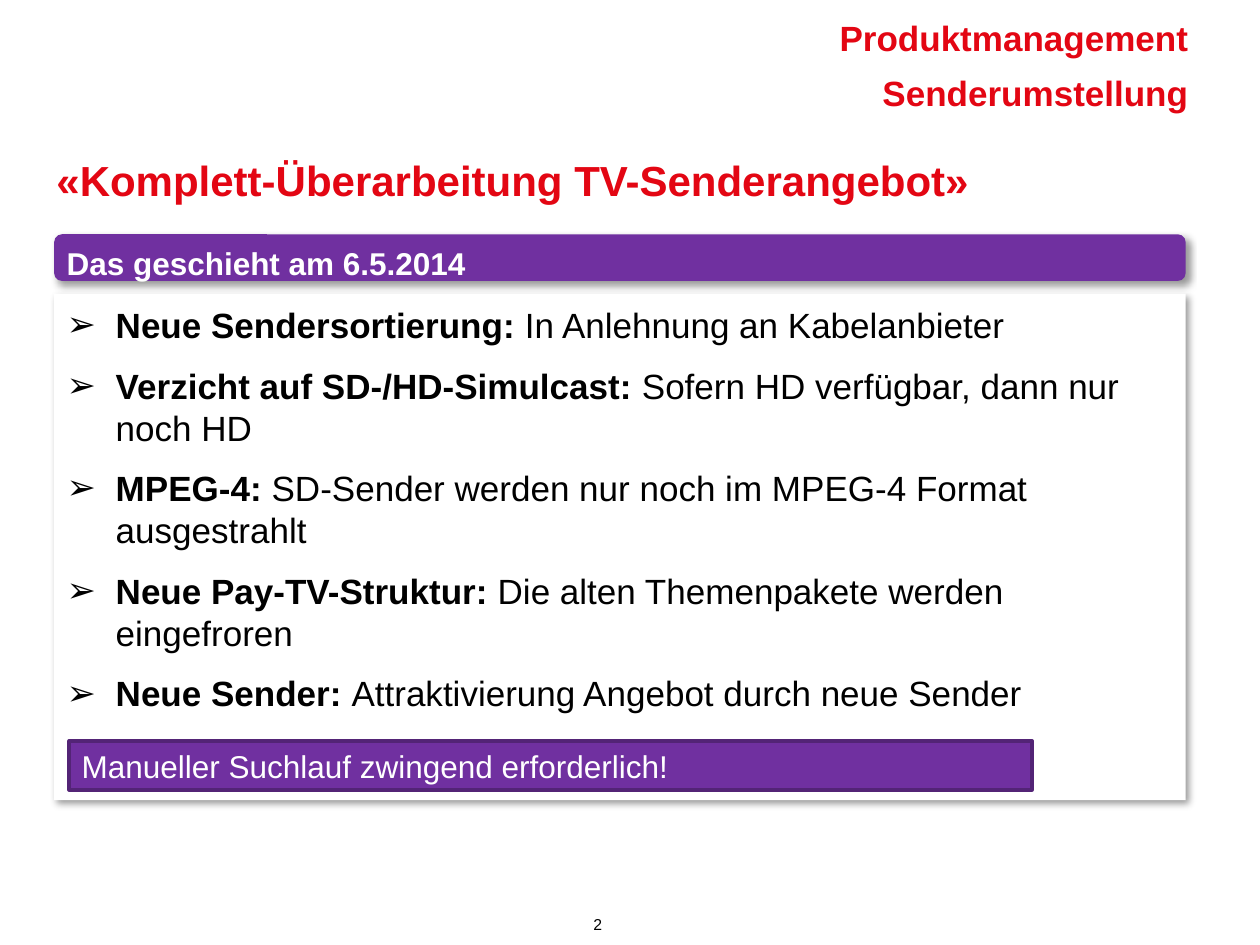
from dataclasses import dataclass
from typing import NamedTuple

from lxml.etree import SubElement
from pptx import Presentation
from pptx.dml.color import RGBColor
from pptx.enum.shapes import MSO_SHAPE as Preset
from pptx.enum.text import MSO_ANCHOR as Anchor, PP_ALIGN as Align
from pptx.oxml.ns import qn
from pptx.util import Inches, Pt


@dataclass(frozen=True)
class Theme:
    font: str = "Arial"
    red: str = "E30613"
    purple: str = "7030A0"
    purple_dark: str = "532476"
    white: str = "FFFFFF"
    black: str = "000000"
    title_size: float = 24
    body_size: float = 20
    bar_size: float = 18
    number_size: float = 9


class Box(NamedTuple):
    left: float
    top: float
    width: float
    height: float

    def lengths(self):
        return [Inches(value) for value in self]


class Point(NamedTuple):
    lead: str
    detail: str


THEME = Theme()
HEADINGS = ["Produktmanagement", "Senderumstellung"]
HEADING_BOX = Box(4.29, 0.05, 5.24, 0.44)
TITLE_BOX = Box(0.35, 1.15, 9.06, 0.55)
BAR_BOX = Box(0.43, 1.86, 8.98, 0.37)
PANEL_BOX = Box(0.43, 2.33, 8.98, 4.02)
CALLOUT_BOX = Box(0.55, 5.88, 7.64, 0.39)
NUMBER_BOX = Box(3.58, 7.21, 2.33, 0.29)
TEXT_TOP = 0.08
POINTS = [
    Point("Neue Sendersortierung: ", "In Anlehnung an Kabelanbieter"),
    Point("Verzicht auf SD-/HD-Simulcast: ", "Sofern HD verfügbar, dann nur noch HD"),
    Point("MPEG-4: ", "SD-Sender werden nur noch im MPEG-4 Format ausgestrahlt"),
    Point("Neue Pay-TV-Struktur: ", "Die alten Themenpakete werden eingefroren"),
    Point("Neue Sender: ", "Attraktivierung Angebot durch neue Sender"),
]


def add_run(paragraph, text: str, *, size: float, color: str, bold: bool = False) -> None:
    run = paragraph.add_run()
    run.text = text
    run.font.name = THEME.font
    run.font.size = Pt(size)
    run.font.bold = bold
    run.font.color.rgb = RGBColor.from_string(color)


def write_text(shape, text: str, *, size: float, color: str, bold: bool = False,
               align: Align = Align.LEFT, anchor: Anchor = Anchor.TOP,
               inset_top: float = TEXT_TOP) -> None:
    frame = shape.text_frame
    frame.word_wrap = True
    frame.vertical_anchor = anchor
    frame.margin_top = Inches(inset_top)
    paragraph = frame.paragraphs[0]
    paragraph.alignment = align
    add_run(paragraph, text, size=size, color=color, bold=bold)


def add_text_box(slide, box: Box, text: str, **text_format) -> None:
    write_text(slide.shapes.add_textbox(*box.lengths()), text, **text_format)


def add_filled_shape(slide, preset: Preset, box: Box, fill: str):
    shape = slide.shapes.add_shape(preset, *box.lengths())
    shape.shadow.inherit = False
    shape.fill.solid()
    shape.fill.fore_color.rgb = RGBColor.from_string(fill)
    shape.line.fill.background()
    return shape


def add_shadow(shape) -> None:
    """Cast a soft shadow to the lower right."""
    effects = shape._element.spPr.find(qn("a:effectLst"))
    shadow = SubElement(effects, qn("a:outerShdw"), blurRad=str(Pt(4)), dist=str(Pt(3)),
                        dir=str(45 * 60000), algn="tl", rotWithShape="0")
    color = SubElement(shadow, qn("a:srgbClr"), val=THEME.black)
    SubElement(color, qn("a:alpha"), val="40000")


def write_points(shape, points: list[Point]) -> None:
    frame = shape.text_frame
    frame.word_wrap = True
    frame.vertical_anchor = Anchor.TOP
    frame.margin_top = Inches(TEXT_TOP)
    indent = Inches(0.39)
    for index, point in enumerate(points):
        paragraph = frame.add_paragraph() if index else frame.paragraphs[0]
        paragraph.alignment = Align.LEFT
        paragraph.space_before = Pt(4.6 if index else 0)
        paragraph.space_after = Pt(6)
        properties = paragraph._p.get_or_add_pPr()
        properties.set("marL", str(indent))
        properties.set("indent", str(-indent))
        bullet_color = SubElement(properties, qn("a:buClr"))
        SubElement(bullet_color, qn("a:srgbClr"), val=THEME.black)
        SubElement(properties, qn("a:buFont"), typeface=THEME.font)
        SubElement(properties, qn("a:buChar"), char="➢")
        for text, bold in ((point.lead, True), (point.detail, False)):
            add_run(paragraph, text, size=THEME.body_size, color=THEME.black, bold=bold)


def main() -> None:
    presentation = Presentation()
    presentation.slide_width, presentation.slide_height = Inches(10), Inches(7.5)
    slide = presentation.slides.add_slide(presentation.slide_layouts[6])

    for row, heading in enumerate(HEADINGS):
        box = HEADING_BOX._replace(top=HEADING_BOX.top + row * HEADING_BOX.height)
        add_text_box(slide, box, heading, size=THEME.body_size, color=THEME.red,
                     bold=True, align=Align.RIGHT)
    add_text_box(slide, TITLE_BOX, "«Komplett-Überarbeitung TV-Senderangebot»",
                 size=THEME.title_size, color=THEME.red, bold=True)

    bar = add_filled_shape(slide, Preset.ROUNDED_RECTANGLE, BAR_BOX, THEME.purple)
    add_shadow(bar)
    add_text_box(slide, BAR_BOX, "Das geschieht am 6.5.2014",
                 size=THEME.bar_size, color=THEME.white, bold=True)

    panel = add_filled_shape(slide, Preset.RECTANGLE, PANEL_BOX, THEME.white)
    add_shadow(panel)
    write_points(panel, POINTS)

    add_text_box(slide, NUMBER_BOX, "2", size=THEME.number_size, color=THEME.black,
                 align=Align.CENTER, inset_top=0.05)

    callout = add_filled_shape(slide, Preset.RECTANGLE, CALLOUT_BOX, THEME.purple)
    callout.line.color.rgb = RGBColor.from_string(THEME.purple_dark)
    callout.line.width = Pt(2)
    write_text(callout, "Manueller Suchlauf zwingend erforderlich!", size=THEME.bar_size,
               color=THEME.white, anchor=Anchor.MIDDLE, inset_top=0.05)

    presentation.save("out.pptx")


if __name__ == "__main__":
    main()
